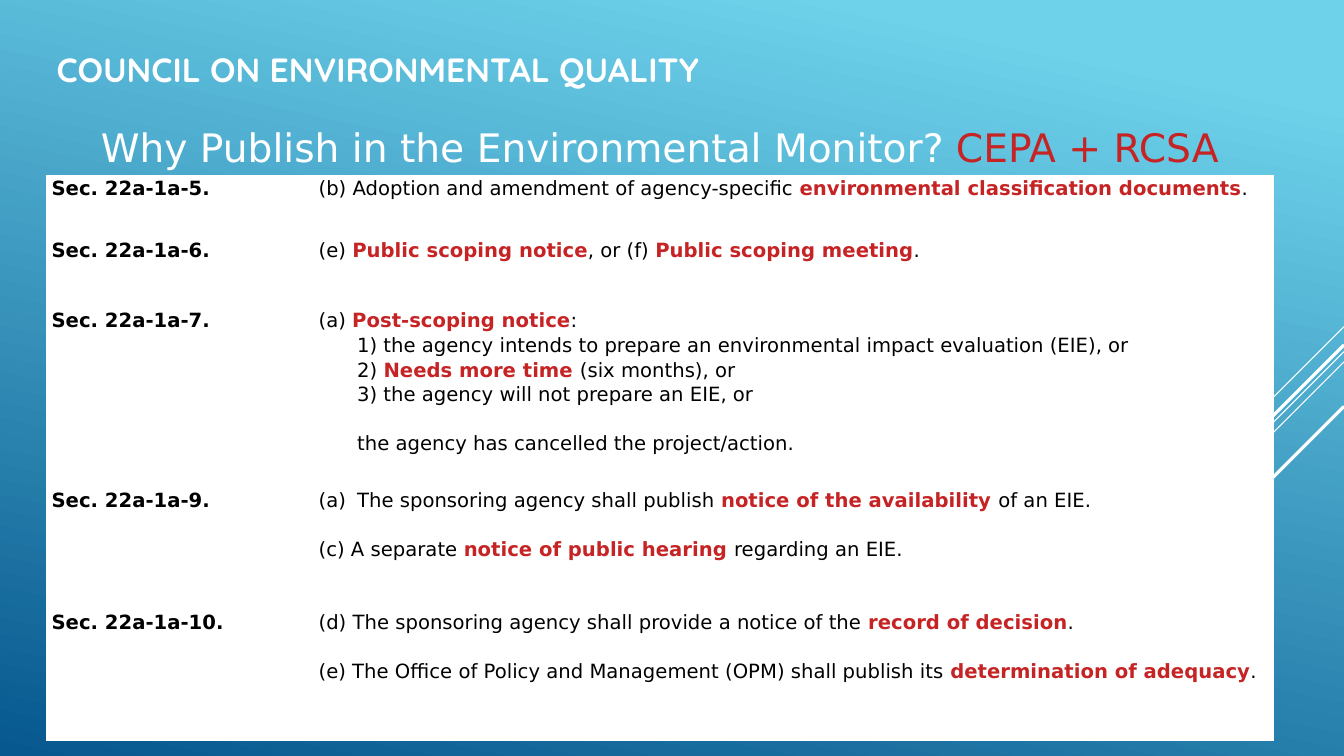
from lxml.etree import SubElement
from pptx import Presentation
from pptx.dml.color import RGBColor
from pptx.enum.shapes import MSO_CONNECTOR
from pptx.enum.text import MSO_ANCHOR, PP_ALIGN
from pptx.oxml.ns import qn
from pptx.util import Cm, Pt

COLORS = {"white": "FFFFFF", "black": "000000", "red": "C62324",
          "sky": "6ED2EB", "deep": "06588E"}
BODY_FONT = "DejaVu Sans"
TITLE_FONT = "Quicksand"
WIDTH, HEIGHT = 33.87, 19.05
LEFT, CONTENT_WIDTH = 1.17, 30.91
HANG = 0.97
LINE_GAP = 17.5

STRIPES = [(8.23, 2.54, 0.75), (8.86, 8.28, 0.75), (9.12, 5.26, 0.75),
           (8.69, 4.85, 2.25), (10.24, 3.53, 2.25)]

COLUMN_WIDTHS = [6.73, 24.2]
SECTIONS = [
    (1.57, "Sec. 22a-1a-5.", [
        ("plain", "(b) Adoption and amendment of agency-specific "
                  "*environmental classification documents*.")]),
    (0.99, "Sec. 22a-1a-6.", [
        ("plain", "(e) *Public scoping notice*, or (f) *Public scoping meeting*.")]),
    (0.78, None, []),
    (3.74, "Sec. 22a-1a-7.", [
        ("plain", "(a) *Post-scoping notice*:"),
        ("indent", "1) the agency intends to prepare an environmental "
                   "impact evaluation (EIE), or"),
        ("indent", "2) *Needs more time *(six months), or"),
        ("indent", "3) the agency will not prepare an EIE, or"),
        ("indent spaced", "the agency has cancelled the project/action.")]),
    (0.78, "", []),
    (1.24, "Sec. 22a-1a-9.", [
        ("lettered", "The sponsoring agency shall publish "
                     "*notice of the availability *of an EIE.")]),
    (1.85, "", [
        ("plain", "(c) A separate *notice of public hearing *regarding an EIE.")]),
    (1.98, "Sec. 22a-1a-10.", [
        ("plain", "(d) The sponsoring agency shall provide a notice of the "
                  "*record of decision*."),
        ("spaced", "(e) The Office of Policy and Management (OPM) shall publish its "
                   "*determination of adequacy*.")]),
    (1.3, None, []),
]


def rgb(name):
    return RGBColor.from_string(COLORS[name])


def format_run(r, size, color, bold=False, font=BODY_FONT):
    r.font.name = font
    r.font.size = Pt(size)
    r.font.bold = bold
    r.font.color.rgb = rgb(color)


def paint_background(s):
    fill = s.background.fill
    fill.gradient()
    fill.gradient_angle = 258
    for stop, position, color in zip(fill.gradient_stops, (0.1, 1), ("sky", "deep")):
        stop.position = position
        stop.color.rgb = rgb(color)


def add_stripe(s, top, run, weight):
    line = s.shapes.add_connector(MSO_CONNECTOR.STRAIGHT, Cm(WIDTH), Cm(top),
                                  Cm(WIDTH - run), Cm(top + run))
    line.line.color.rgb = rgb("white")
    line.line.width = Pt(weight)
    SubElement(line._element.spPr, qn("a:effectLst"))


def place(sp, top, height, margin_top):
    sp.left, sp.top = Cm(LEFT), Cm(top)
    sp.width, sp.height = Cm(CONTENT_WIDTH), Cm(height)
    tf = sp.text_frame
    tf.word_wrap = True
    tf.vertical_anchor = MSO_ANCHOR.TOP
    tf.margin_top = Cm(margin_top)
    return tf.paragraphs[0]


def fill_title(sp):
    p = place(sp, 1.02, 2.29, 0.2)
    p.text = "COUNCIL ON ENVIRONMENTAL QUALITY"
    p.alignment = PP_ALIGN.LEFT
    format_run(p.runs[0], 24, "white", True, TITLE_FONT)


def fill_subtitle(sp):
    p = place(sp, 0.79, 16.38, 2.31)
    p.alignment = PP_ALIGN.CENTER
    p.space_before = Pt(0)
    pPr = p._p.get_or_add_pPr()
    pPr.set("marL", "0")
    pPr.set("indent", "0")
    SubElement(pPr, qn("a:buNone"))
    for text, color in (("Why Publish in the Environmental Monitor? ", "white"),
                        ("CEPA + RCSA", "red")):
        r = p.add_run()
        r.text = text
        format_run(r, 28, color)


def write_clause(p, style, text):
    p.line_spacing = 1.07
    if "spaced" in style:
        p.space_before = Pt(LINE_GAP)
    pPr = p._p.get_or_add_pPr()
    if "indent" in style or style == "lettered":
        pPr.set("marL", str(Cm(HANG)))
    if style == "lettered":
        pPr.set("indent", str(-Cm(HANG)))
        SubElement(pPr, qn("a:buAutoNum"), type="alphaLcParenBoth")
    for i, part in enumerate(text.split("*")):
        if part:
            r = p.add_run()
            r.text = part
            key = i % 2 == 1
            format_run(r, 14, "red" if key else "black", key)


def write_section(p, text):
    p.text = text
    p.line_spacing = 1.07
    for r in p.runs:
        format_run(r, 14, "black", True)


def style_cell(cell):
    cell.fill.solid()
    cell.fill.fore_color.rgb = rgb("white")
    cell.margin_left = cell.margin_right = Cm(0.13)
    cell.margin_top = cell.margin_bottom = 0


def add_sections(s):
    frame = s.shapes.add_table(len(SECTIONS), len(COLUMN_WIDTHS), Cm(LEFT), Cm(4.42),
                               Cm(sum(COLUMN_WIDTHS)), Cm(sum(row[0] for row in SECTIONS)))
    table = frame.table
    for column, width in zip(table.columns, COLUMN_WIDTHS):
        column.width = Cm(width)
    for i, (height, section, clauses) in enumerate(SECTIONS):
        table.rows[i].height = Cm(height)
        name, detail = table.cell(i, 0), table.cell(i, 1)
        style_cell(name)
        style_cell(detail)
        if section is None:
            name.merge(detail)
        elif section:
            write_section(name.text_frame.paragraphs[0], section)
        tf = detail.text_frame
        for j, (style, text) in enumerate(clauses):
            p = tf.add_paragraph() if j else tf.paragraphs[0]
            write_clause(p, style, text)


def main():
    prs = Presentation()
    prs.slide_width, prs.slide_height = Cm(WIDTH), Cm(HEIGHT)
    s = prs.slides.add_slide(prs.slide_layouts[1])
    paint_background(s)
    fill_title(s.shapes.title)
    fill_subtitle(s.placeholders[1])
    for stripe in STRIPES:
        add_stripe(s, *stripe)
    add_sections(s)
    prs.save("out.pptx")


if __name__ == "__main__":
    main()
